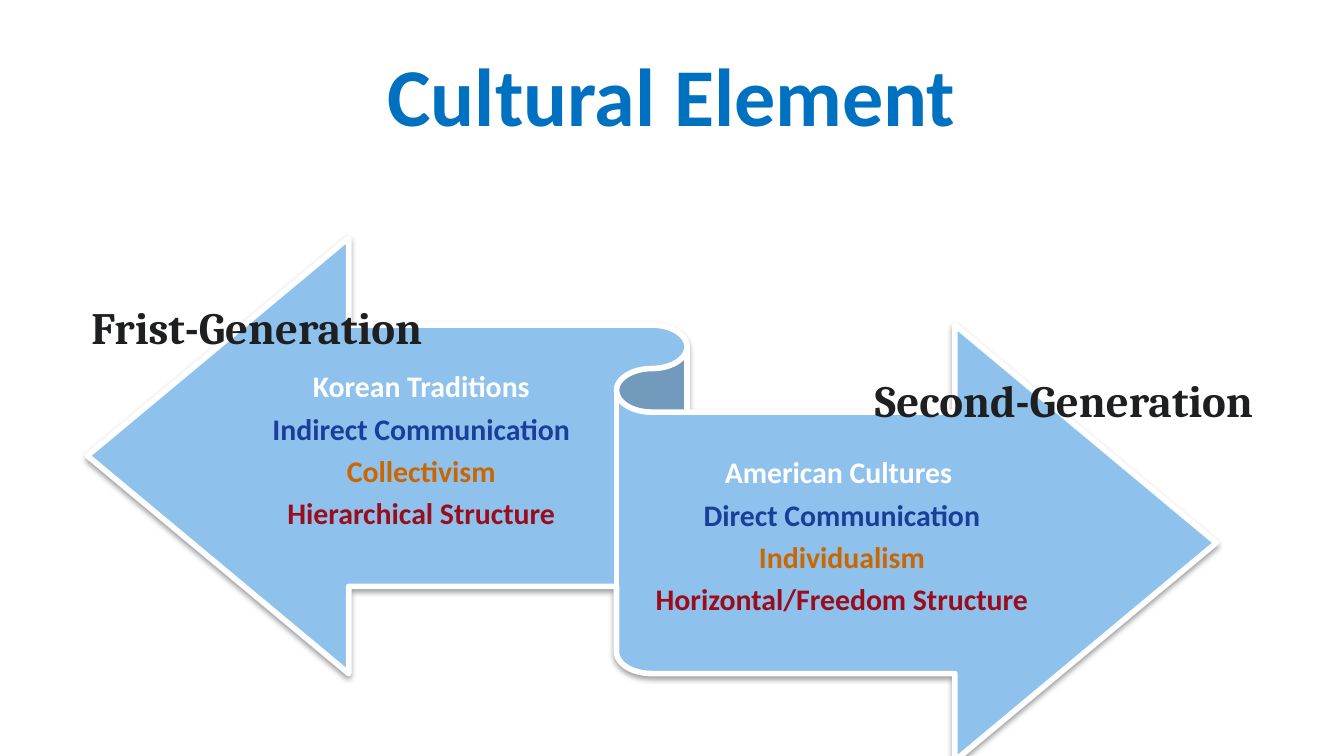
"""Build the Cultural Element slide comparing two generations."""
from pptx import Presentation
from pptx.dml.color import RGBColor
from pptx.enum import shapes, text
from pptx.oxml import parse_xml
from pptx.oxml.ns import nsdecls
from pptx.util import Inches, Pt

LIST_COLORS = ["FFFFFF", "193F9C", "CC6600", "9A0D1C"]
GENERATIONS = [
    ("Frist-Generation", 1, (0.58, 2.16, 4.42, 0.52), (1.75, 2.54, 2.77, 1.65),
     ["Korean Traditions", "Indirect Communication", "Collectivism",
      "Hierarchical Structure"]),
    ("Second-Generation", 3, (6.41, 2.7, 4.42, 0.52), (4.63, 3.18, 3.27, 1.65),
     ["American Cultures ", "Direct Communication", "Individualism",
      "Horizontal/Freedom Structure"]),
]


def rgb(value):
    return RGBColor.from_string(value)


def inches(box):
    return [Inches(length) for length in box]


class SlideBuilder:
    def __init__(self, slide):
        self.slide = slide
        self.diagram = slide.shapes.add_group_shape()
        slide.shapes._spTree.insert(2, self.diagram._element)

    def style(self, paragraph, size, font, color, align):
        paragraph.alignment = align
        paragraph.font.size = Pt(size)
        paragraph.font.name = font
        paragraph.font.bold = True
        paragraph.font.color.rgb = rgb(color)

    def heading(self, idx, box, words, size, font, color, align, anchor):
        holder = self.slide.placeholders[idx]
        holder.left, holder.top, holder.width, holder.height = inches(box)
        frame = holder.text_frame
        frame.text = words
        frame.vertical_anchor = anchor
        frame.paragraphs[0].space_before = Pt(0)
        self.style(frame.paragraphs[0], size, font, color, align)

    def ribbon(self, box):
        ribbon = self.diagram.shapes.add_shape(
            shapes.MSO_SHAPE.LEFT_RIGHT_RIBBON, *inches(box))
        ribbon.fill.solid()
        ribbon.fill.fore_color.rgb = rgb("8EC1EB")
        ribbon.line.color.rgb = rgb("FFFFFF")
        ribbon.line.width = Pt(3)
        ribbon.shadow.inherit = False
        ribbon._element.spPr.find("{*}effectLst").append(parse_xml(
            f'<a:outerShdw {nsdecls("a")} blurRad="{Pt(3.1)}" dist="{Pt(1.6)}" '
            'dir="5400000" rotWithShape="0"><a:srgbClr val="000000">'
            '<a:alpha val="38000"/></a:srgbClr></a:outerShdw>'))

    def traits(self, box, lines):
        frame = self.diagram.shapes.add_textbox(*inches(box)).text_frame
        frame.word_wrap = True
        frame.vertical_anchor = text.MSO_ANCHOR.MIDDLE
        frame.margin_left = frame.margin_right = 0
        frame.margin_top, frame.margin_bottom = Inches(0.06), Inches(0.07)
        frame.text = "\n".join(lines)
        for paragraph, color in zip(frame.paragraphs, LIST_COLORS):
            paragraph.line_spacing = 0.9
            paragraph.space_after = Pt(5.4)
            self.style(paragraph, 16, "Calibri", color, text.PP_ALIGN.CENTER)

    def remove_empty_placeholders(self):
        for holder in list(self.slide.placeholders):
            if not holder.text_frame.text:
                holder._element.getparent().remove(holder._element)


def main():
    deck = Presentation()
    deck.slide_width = Inches(10)
    deck.slide_height = deck.slide_width * 9 // 16
    comparison = deck.slide_layouts.get_by_name("Comparison")
    builder = SlideBuilder(deck.slides.add_slide(comparison))
    builder.heading(0, (0.5, 0.23, 9, 0.94), "Cultural Element", 44, "Calibri",
                    "0070C0", text.PP_ALIGN.CENTER, text.MSO_ANCHOR.MIDDLE)
    builder.ribbon((0.65, 1.77, 8.4, 3.89))
    for generation, idx, heading_box, traits_box, lines in GENERATIONS:
        builder.heading(idx, heading_box, generation, 24, "Cambria", "1E1F21",
                        text.PP_ALIGN.LEFT, text.MSO_ANCHOR.BOTTOM)
        builder.traits(traits_box, lines)
    builder.remove_empty_placeholders()
    deck.save("out.pptx")


if __name__ == "__main__":
    main()
